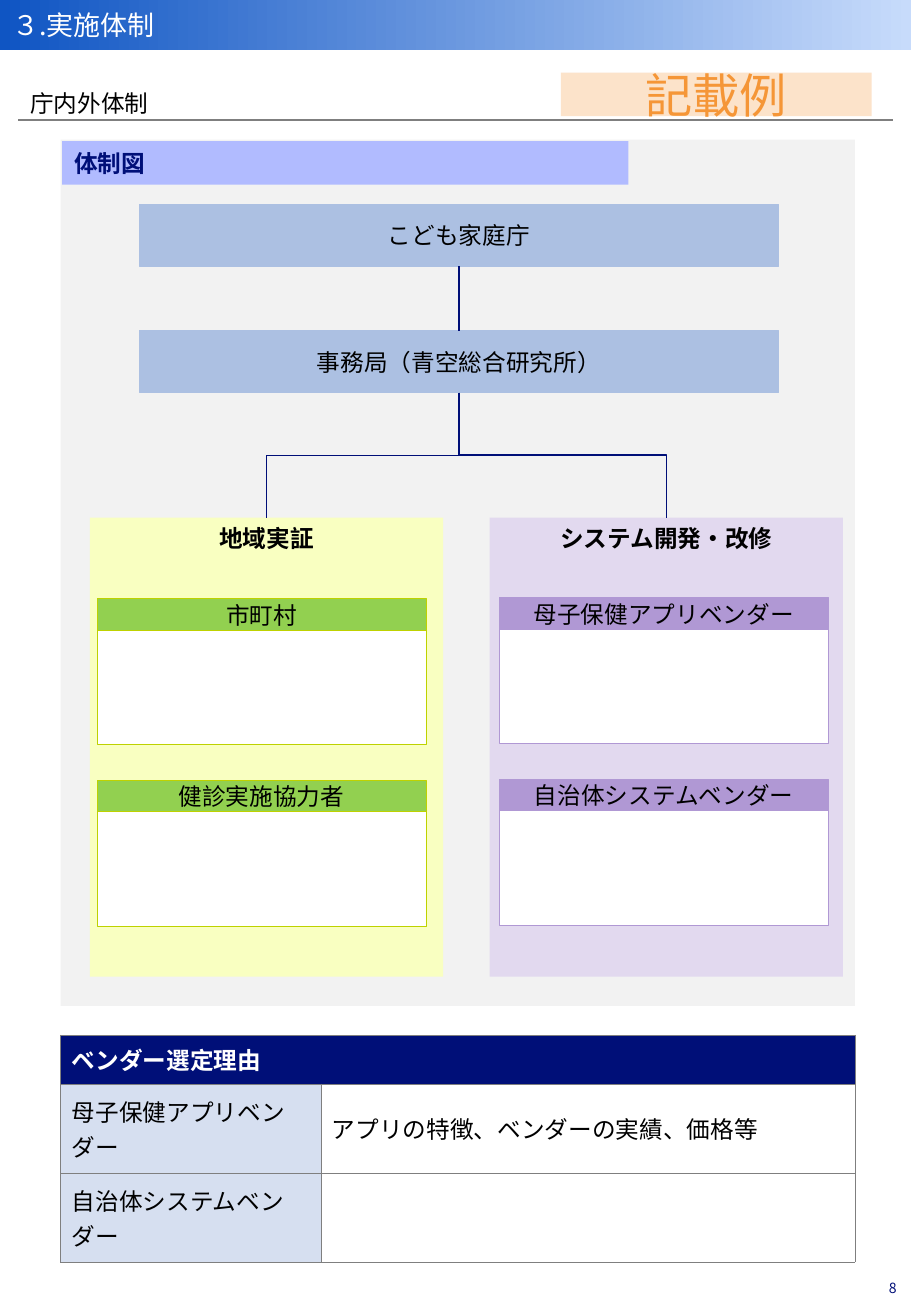
from lxml.etree import SubElement
from pptx import Presentation
from pptx.dml.color import RGBColor
from pptx.enum.shapes import MSO_CONNECTOR, MSO_SHAPE
from pptx.enum.text import MSO_ANCHOR, MSO_AUTO_SIZE, PP_ALIGN
from pptx.oxml.ns import qn
from pptx.util import Cm, Pt

FONT = "Noto Sans CJK JP"
COLORS = {
    "navy": "000F78", "blue": "0F55C3", "sky": "C7DBFB", "white": "FFFFFF",
    "black": "000000", "panel": "F2F2F2", "lilac": "B1BBFF", "gray": "7F7F7F",
    "steel": "ACC0E2", "pale_blue": "D6DFF0", "yellow": "F9FFC1", "green": "92D050",
    "lime": "BED200", "lavender": "E2D9EF", "purple": "B098D4",
    "peach": "F9C087", "orange": "F59637",
}
RGB = {name: RGBColor.from_string(value) for name, value in COLORS.items()}


def write(frame, text, color="black", align=PP_ALIGN.CENTER, anchor=MSO_ANCHOR.MIDDLE, **font_format):
    frame.vertical_anchor = anchor
    paragraph = frame.paragraphs[0]
    paragraph.alignment = align
    run = paragraph.add_run()
    run.text = text
    for key, value in {"name": FONT, "size": Pt(14), "bold": False, **font_format}.items():
        setattr(run.font, key, value)
    run.font.color.rgb = RGB[color]
    SubElement(run.font._element, qn("a:ea"), typeface=FONT)


def add_box(left, top, width, height, fill, line=None):
    box = slide.shapes.add_shape(MSO_SHAPE.RECTANGLE, Cm(left), Cm(top), Cm(width), Cm(height))
    box.shadow.inherit = False
    box.fill.solid()
    box.fill.fore_color.rgb = RGB[fill]
    if line:
        box.line.color.rgb = RGB[line]
        box.line.width = Pt(0.5)
    else:
        box.line.fill.background()
    box.text_frame.word_wrap = True
    return box


prs = Presentation()
prs.slide_width, prs.slide_height = Cm(19.05), Cm(27.51)
slide = prs.slides.add_slide(prs.slide_layouts[5])

title = slide.shapes.title
for side, length in {"left": 0, "top": 0, "width": 19.05, "height": 1.04}.items():
    setattr(title, side, Cm(length))
title.fill.gradient()
title.fill.gradient_angle = 0
for stop, color, position in zip(title.fill.gradient_stops, ("blue", "sky"), (0, 1)):
    stop.color.rgb = RGB[color]
    stop.position = position
title.text_frame.auto_size = MSO_AUTO_SIZE.NONE
write(title.text_frame, "３.実施体制", "white", PP_ALIGN.LEFT, size=Pt(16))

page_number = slide.shapes.add_textbox(Cm(18.11), Cm(26.57), Cm(0.94), Cm(0.69)).text_frame
for side, inset in {"left": 0, "top": 0, "right": 0.3, "bottom": 0}.items():
    setattr(page_number, f"margin_{side}", Cm(inset))
page_number.word_wrap = True
write(page_number, "8", "navy", PP_ALIGN.RIGHT, size=Pt(8.3))

add_box(1.27, 2.92, 16.61, 18.11, "panel")
chart_heading = add_box(1.3, 2.95, 11.84, 0.91, "lilac")
write(chart_heading.text_frame, "体制図", "navy", PP_ALIGN.LEFT, bold=True)

section = slide.shapes.add_textbox(Cm(0.38), Cm(1.73), Cm(16.33), Cm(0.86)).text_frame
section.word_wrap = True
write(section, "庁内外体制", align=PP_ALIGN.LEFT, anchor=MSO_ANCHOR.TOP)

reasons = [
    ("ベンダー選定理由", ""),
    ("母子保健アプリベンダー", "アプリの特徴、ベンダーの実績、価格等"),
    ("自治体システムベンダー", ""),
]
table = slide.shapes.add_table(3, 2, Cm(1.27), Cm(21.64), Cm(16.61), Cm(4.74)).table
table.first_row = table.horz_banding = False
for column, width in zip(table.columns, (5.44, 11.17)):
    column.width = Cm(width)
for row, height in zip(table.rows, (1.02, 1.86, 1.86)):
    row.height = Cm(height)
table.cell(0, 0).merge(table.cell(0, 1))
for r, reason in enumerate(reasons):
    for c, text in enumerate(reason):
        cell = table.cell(r, c)
        for edge in ("lnL", "lnR", "lnT", "lnB"):
            border = SubElement(cell._tc.get_or_add_tcPr(), qn(f"a:{edge}"), w=str(Pt(0.5)))
            SubElement(SubElement(border, qn("a:solidFill")), qn("a:srgbClr"), val=COLORS["gray"])
        cell.fill.solid()
        cell.fill.fore_color.rgb = RGB["navy" if r == 0 else ("pale_blue", "white")[c]]
        cell.margin_left = cell.margin_right = Cm(0.23)
        cell.margin_top = cell.margin_bottom = Cm(0.1)
        cell.vertical_anchor = MSO_ANCHOR.MIDDLE
        if text:
            write(cell.text_frame, text, "white" if r == 0 else "black", PP_ALIGN.LEFT, bold=r == 0)

groups = [
    ("地域実証", 1.88, "yellow", 2.03, 12.52, "green", "lime", ("市町村", "健診実施協力者")),
    ("システム開発・改修", 10.24, "lavender", 10.44, 12.5, "purple", "purple",
     ("母子保健アプリベンダー", "自治体システムベンダー")),
]
for name, left, fill, member_left, member_top, label_fill, outline, members in groups:
    group = add_box(left, 10.82, 7.39, 9.6, fill)
    write(group.text_frame, name, anchor=MSO_ANCHOR.TOP, bold=True)
    for index, member in enumerate(members):
        top = member_top + index * 3.79
        label = add_box(member_left, top, 6.88, 0.66, label_fill, outline)
        write(label.text_frame, member)
        add_box(member_left, top + 0.66, 6.88, 2.39, "white", outline)

for organization, top in (("こども家庭庁", 4.27), ("事務局（青空総合研究所）", 6.91)):
    office = add_box(2.92, top, 13.36, 1.3, "steel", "steel")
    write(office.text_frame, organization)

trunk, fork_top, drop = 9.6, 8.21, 2.61
middle = fork_top + drop / 2
links = [
    (MSO_CONNECTOR.STRAIGHT, 0.38, 2.51, 18.67, 2.51, "gray", 0.75, 0),
    (MSO_CONNECTOR.STRAIGHT, trunk, 5.57, trunk, 6.91, "navy", 1, 0),
]
for target, direction, weight, angle in ((13.94, -1, 1, 270), (5.57, 1, 0.5, 90)):
    center, reach, half = (trunk + target) / 2, abs(target - trunk) / 2, direction * drop / 2
    links.append((MSO_CONNECTOR.ELBOW, center - half, middle - reach, center + half, middle + reach,
                  "navy", weight, angle))
for kind, x1, y1, x2, y2, color, weight, angle in links:
    link = slide.shapes.add_connector(kind, Cm(x1), Cm(y1), Cm(x2), Cm(y2))
    link.line.color.rgb = RGB[color]
    link.line.width = Pt(weight)
    SubElement(link._element.spPr, qn("a:effectLst"))
    if angle:
        link._element.spPr.find(qn("a:xfrm")).set("rot", str(angle * 60000))

badge = add_box(11.73, 1.52, 6.5, 0.91, "peach")
badge_color = badge._element.spPr.find(qn("a:solidFill")).find(qn("a:srgbClr"))
SubElement(badge_color, qn("a:alpha"), val="44000")
badge.text_frame.word_wrap = False
write(badge.text_frame, "記載例", "orange", size=Pt(28))

prs.save("out.pptx")
